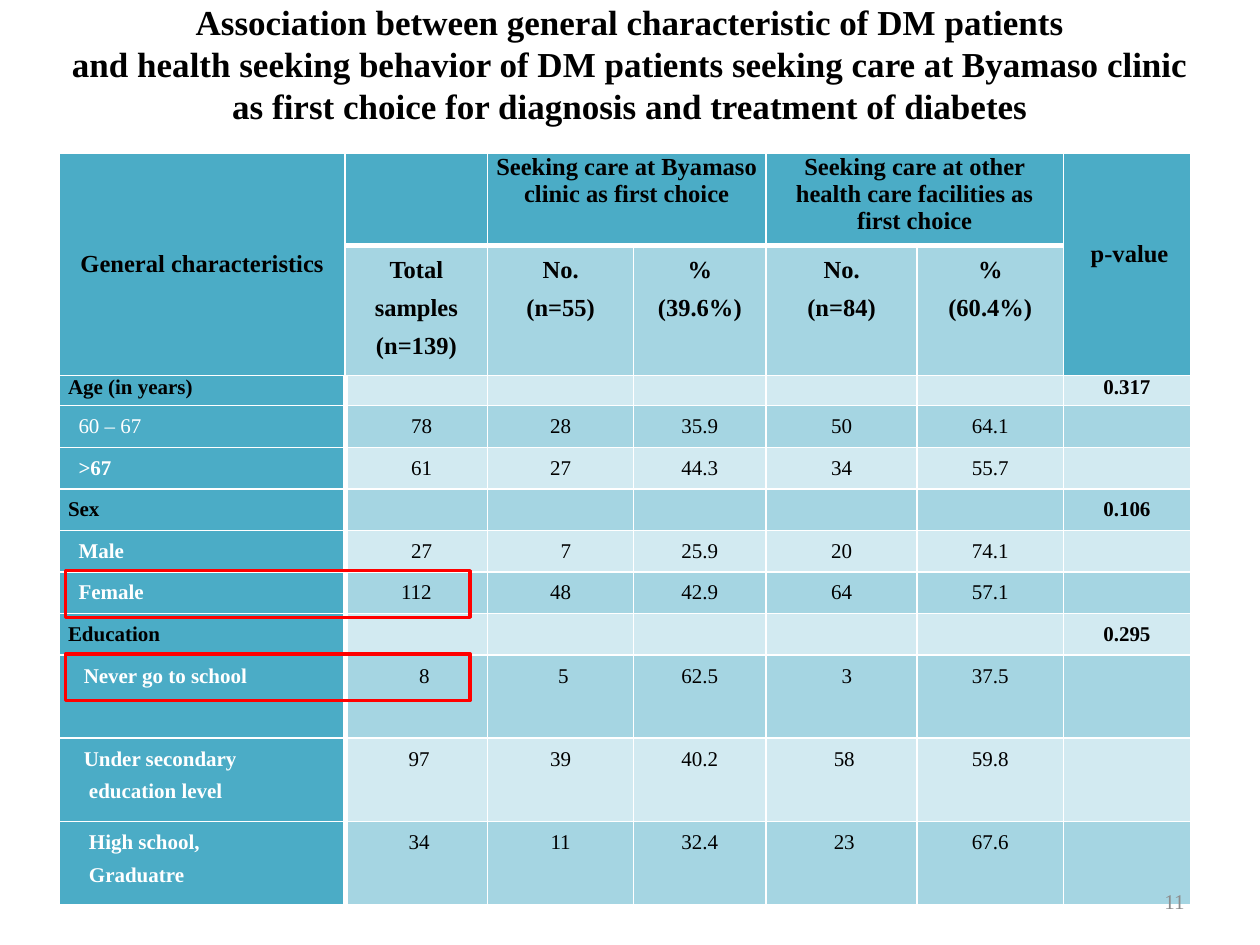
"""Build the slide on patient characteristics and choice of care."""
from typing import NamedTuple

from lxml.etree import SubElement
from pptx import Presentation
from pptx.dml.color import RGBColor
from pptx.enum.shapes import MSO_SHAPE
from pptx.enum.text import MSO_ANCHOR, MSO_AUTO_SIZE, PP_ALIGN
from pptx.oxml.ns import qn
from pptx.util import Inches, Pt

COLORS = {"head": "4BACC6", "dark_band": "A5D5E2", "light_band": "D2EAF1", "white": "FFFFFF",
          "black": "000000", "grey": "8C8C8C", "red": "FF0000"}
FONT = "Times New Roman"
GRID = 0.1
SPACE_WIDTH = Pt(3)


class Area(NamedTuple):
    left: float
    top: float
    width: float
    height: float

    def place(self) -> list:
        return [Inches(value * GRID) for value in self]


class Line(NamedTuple):
    text: str
    indent: int = 0


class Category(NamedTuple):
    label: list
    numbers: list = []
    p_value: str = ""
    height: float = 3.3
    bold: bool = True


TITLE_AREA = Area(4.5, 0, 91, 13)
TABLE_AREA = Area(4.7, 12.2, 89.8, 59.5)
NUMBER_AREA = Area(71.7, 69.5, 23.3, 4)
COLUMNS = [22.7, 11.3, 11.6, 10.5, 12, 11.6, 10.1]
HEADER_ROWS = [7.3, 10.3]
MERGES = [((0, 0), (1, 0)), ((0, 2), (0, 3)), ((0, 4), (0, 5)), ((0, 6), (1, 6))]
GROUP_HEADS = {2: "Seeking care at Byamaso clinic as first choice",
               4: "Seeking care at other health care facilities as first choice"}
SUBHEADS = [["Total samples (n=139)"], ["No.", "(n=55)"], ["%", "(39.6%)"],
            ["No.", "(n=84)"], ["%", "(60.4%)"]]
CATEGORIES = [
    Category([Line("Age (in years)")], p_value="0.317", height=2.4),
    Category([Line("60 – 67", 2)], [Line("78", 2), "28", "35.9", "50", "64.1"], bold=False),
    Category([Line(">67", 2)], [Line("61", 2), "27", "44.3", "34", "55.7"]),
    Category([Line("Sex")], p_value="0.106"),
    Category([Line("Male", 2)], [Line("27", 2), Line("7", 2), "25.9", "20", "74.1"]),
    Category([Line("Female", 2)], ["112", "48", "42.9", "64", "57.1"]),
    Category([Line("Education")], p_value="0.295"),
    Category([Line("Never go to school", 3)],
             [Line("8", 3), Line("5", 1), "62.5", Line("3", 2), "37.5"], height=6.6),
    Category([Line("Under secondary", 3), Line("education level", 4)],
             [Line("97", 1), "39", "40.2", Line("58", 1), "59.8"], height=6.6),
    Category([Line("High school,", 4), Line("Graduatre", 4)],
             [Line("34", 1), "11", "32.4", Line("23", 1), "67.6"], height=6.6),
]
ROWS = HEADER_ROWS + [category.height for category in CATEGORIES]
HIGHLIGHTED_ROWS = [7, 9]


def color(name: str) -> RGBColor:
    return RGBColor.from_string(COLORS[name])


def write(frame, lines: list, size: float = 12, ink: str = "black", bold: bool = False,
          align=PP_ALIGN.CENTER, spacing: float = 1.0) -> None:
    """Fill a text frame with one paragraph per line."""
    for index, entry in enumerate(lines):
        line = entry if isinstance(entry, Line) else Line(entry)
        para = frame.paragraphs[0] if index == 0 else frame.add_paragraph()
        para.alignment = align
        para.line_spacing = spacing
        if line.indent:
            properties = para._p.get_or_add_pPr()
            properties.set("marL", str(line.indent * SPACE_WIDTH))
            properties.set("indent", "0")
        span = para.add_run()
        span.text = line.text
        span.font.name, span.font.size, span.font.bold = FONT, Pt(size), bold
        span.font.color.rgb = color(ink)


def style_cell(cell, row: int, column: int) -> None:
    """Set the margins, borders, fill and empty-line size of a cell."""
    cell.margin_left = cell.margin_right = Inches(0.07)
    cell.margin_top = cell.margin_bottom = 0
    inner = 1 <= column <= 5
    thick = {"lnL": row >= 2 and column == 1, "lnR": row >= 2 and column == 0,
             "lnT": row == 1 and inner, "lnB": row == 0 and inner}
    for tag, is_thick in thick.items():
        border = SubElement(cell._tc.get_or_add_tcPr(), qn(f"a:{tag}"),
                            w=str(Pt(3 if is_thick else 1)))
        SubElement(SubElement(border, qn("a:solidFill")), qn("a:srgbClr"), val=COLORS["white"])
    is_head = column == 0 or row == 0
    band = "dark_band" if row % 2 else "light_band"
    cell.fill.solid()
    cell.fill.fore_color.rgb = color("head" if is_head else band)
    SubElement(cell.text_frame.paragraphs[0]._p, qn("a:endParaRPr"), sz="1200")


def write_header(table) -> None:
    """Write the two heading rows."""
    for column, text in GROUP_HEADS.items():
        write(table.cell(0, column).text_frame, [text], size=14, bold=True)
    for column, lines in enumerate(SUBHEADS, 1):
        write(table.cell(1, column).text_frame, lines, size=14, bold=True, spacing=1.4)
    for column, line in ((0, Line("General characteristics")), (6, Line("p-value", 1))):
        cell = table.cell(0, column)
        cell.vertical_anchor = MSO_ANCHOR.MIDDLE
        write(cell.text_frame, [line], size=14, bold=True)
    table.cell(0, 6).margin_bottom = Inches(0.16)


def write_category(table, row: int, category: Category) -> None:
    """Write the label, numbers and p-value of a category."""
    spacing = 1.0 if row == len(HEADER_ROWS) else 1.4
    write(table.cell(row, 0).text_frame, category.label, bold=category.bold, spacing=spacing,
          ink="white" if category.numbers else "black", align=PP_ALIGN.LEFT)
    for column, number in enumerate(category.numbers, 1):
        write(table.cell(row, column).text_frame, [number], spacing=spacing)
    if category.p_value:
        write(table.cell(row, 6).text_frame, [category.p_value], bold=True, spacing=spacing)


def add_characteristics(page) -> None:
    """Add the table of characteristics."""
    table = page.shapes.add_table(len(ROWS), len(COLUMNS), *TABLE_AREA.place()).table
    table.first_row = table.horz_banding = False
    for column, width in zip(table.columns, COLUMNS):
        column.width = Inches(width * GRID)
    for row, height in zip(table.rows, ROWS):
        row.height = Inches(height * GRID)
    for row in range(len(ROWS)):
        for column in range(len(COLUMNS)):
            style_cell(table.cell(row, column), row, column)
    for first, last in MERGES:
        table.cell(*first).merge(table.cell(*last))
    write_header(table)
    for row, category in enumerate(CATEGORIES, len(HEADER_ROWS)):
        write_category(table, row, category)


def add_highlight(page, row: int) -> None:
    """Frame the label and total of a table row."""
    area = Area(5.2, TABLE_AREA.top + sum(ROWS[:row]) - 0.1, 32.1, 3.7)
    box = page.shapes.add_shape(MSO_SHAPE.RECTANGLE, *area.place())
    box.shadow.inherit = False
    box.fill.background()
    box.line.color.rgb = color("red")
    box.line.width = Pt(2)


def main() -> None:
    """Build and save the deck."""
    deck = Presentation()
    deck.slide_width, deck.slide_height = Inches(10), Inches(7.5)
    page = deck.slides.add_slide(deck.slide_layouts[5])
    title = page.shapes.title
    title.left, title.top, title.width, title.height = TITLE_AREA.place()
    title.text_frame.auto_size = MSO_AUTO_SIZE.NONE
    title.text_frame.vertical_anchor = MSO_ANCHOR.TOP
    title.text_frame.margin_top = 0
    write(title.text_frame,
          ["Association between general characteristic of DM patients",
           "and health seeking behavior of DM patients seeking care at Byamaso clinic "
           "as first choice for diagnosis and treatment of diabetes"], size=20, bold=True)
    add_characteristics(page)
    number = page.shapes.add_textbox(*NUMBER_AREA.place()).text_frame
    number.word_wrap = True
    number.vertical_anchor = MSO_ANCHOR.MIDDLE
    write(number, ["11"], ink="grey", align=PP_ALIGN.RIGHT)
    for row in HIGHLIGHTED_ROWS:
        add_highlight(page, row)
    deck.save("out.pptx")


if __name__ == "__main__":
    main()
